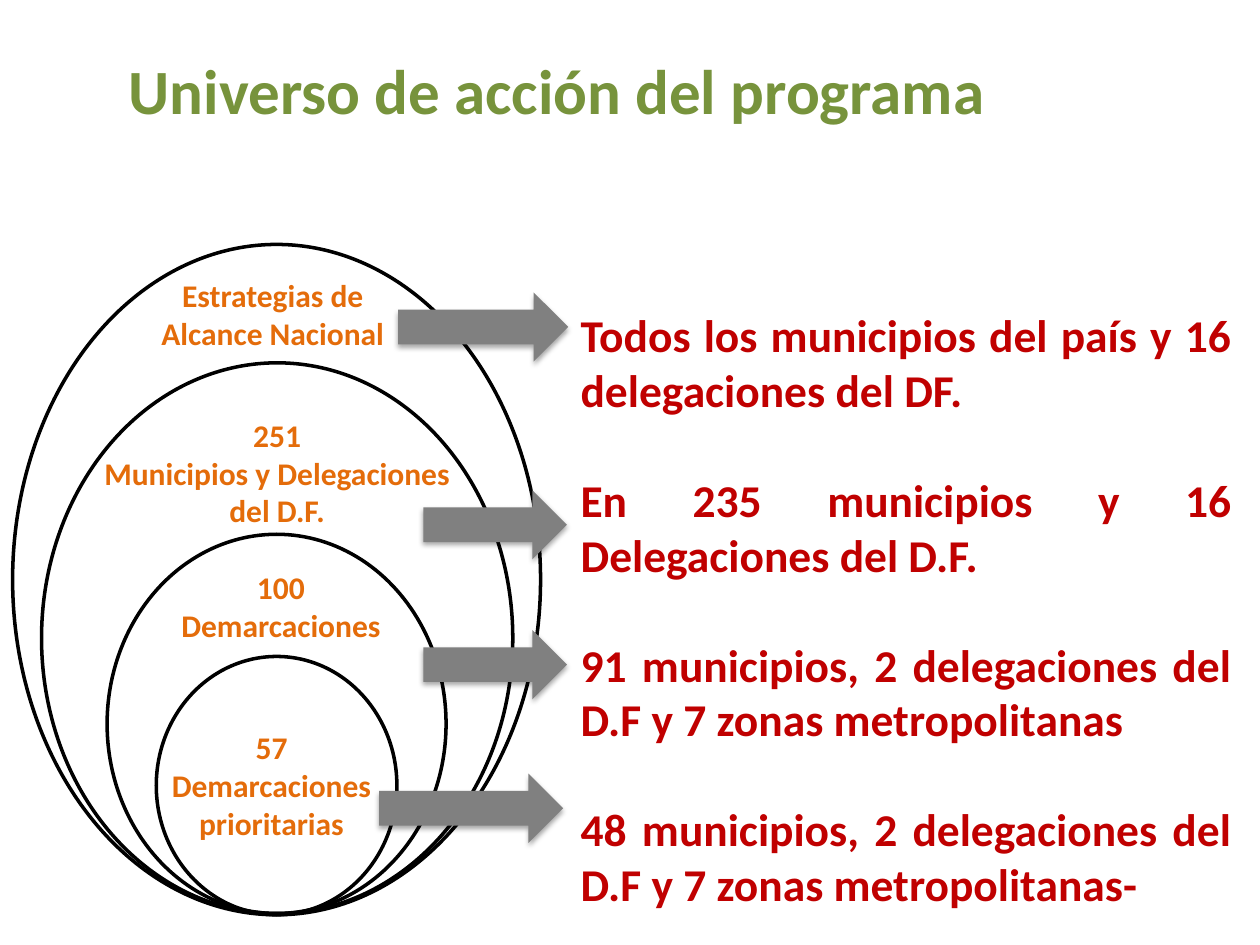
from lxml.etree import SubElement
from pptx import Presentation
from pptx.dml.color import RGBColor
from pptx.enum.shapes import MSO_SHAPE
from pptx.enum.text import PP_ALIGN
from pptx.oxml.ns import qn
from pptx.util import Inches, Pt

COLORS = {"line": "000000", "title": "77933C", "label": "E46C0A",
          "body": "C00000", "arrow": "808080"}


class Deck:
    """Holds the style and the current slide, and draws each kind of element."""

    font = "Calibri"

    def __init__(self, slide):
        self.slide = slide

    def color(self, name):
        return RGBColor.from_string(COLORS[name])

    def shape(self, kind, box):
        item = self.slide.shapes.add_shape(kind, *map(Inches, box))
        item.shadow.inherit = False
        return item

    def ring(self, box):
        item = self.shape(MSO_SHAPE.OVAL, box)
        item.fill.background()
        item.line.color.rgb = self.color("line")
        item.line.width = Pt(2)

    def arrow(self, box):
        item = self.shape(MSO_SHAPE.RIGHT_ARROW, box)
        item.fill.solid()
        item.fill.fore_color.rgb = self.color("arrow")
        item.line.fill.background()
        effects = item._element.spPr.find(qn("a:effectLst"))
        shadow = SubElement(effects, qn("a:outerShdw"), blurRad=str(Pt(3.1)),
                            dist=str(Pt(1.8)), dir="5400000", rotWithShape="0")
        tone = SubElement(shadow, qn("a:srgbClr"), val=COLORS["line"])
        SubElement(tone, qn("a:alpha"), val="35000")

    def text(self, box, lines, color, size, align=PP_ALIGN.CENTER, gap=0):
        frame = self.slide.shapes.add_textbox(*map(Inches, box)).text_frame
        frame.word_wrap = True
        frame.text = "\n".join(lines)
        for para in frame.paragraphs:
            para.alignment = align
            para.space_after = Pt(gap)
            para.font.name = self.font
            para.font.size = Pt(size)
            para.font.bold = True
            para.font.color.rgb = self.color(color)


def main():
    prs = Presentation()
    prs.slide_width, prs.slide_height = Inches(10), Inches(7.5)
    deck = Deck(prs.slides.add_slide(prs.slide_layouts[6]))

    rings = [(0.1, 1.94, 4.19, 5.32), (0.33, 2.88, 3.74, 4.37),
             (0.85, 4.24, 2.69, 3.01), (1.24, 5.21, 1.91, 2.05)]
    labels = [
        ((0.59, 2.14, 3.15, 0.71), ["Estrategias de", "Alcance Nacional"]),
        ((0.47, 3.25, 3.46, 1.01),
         ["251", "Municipios y Delegaciones", "del D.F."]),
        ((0.85, 4.46, 2.76, 0.71), ["100", "Demarcaciones"]),
        ((1.21, 5.73, 1.89, 1.01), ["57 Demarcaciones", "prioritarias"]),
    ]
    arrows = [(3.16, 2.32, 1.35), (3.36, 3.89, 1.14),
              (3.36, 5, 1.14), (3.01, 6.14, 1.46)]
    scopes = [
        "Todos los municipios del país y 16 delegaciones del DF.",
        "En 235 municipios y 16 Delegaciones del D.F.",
        "91 municipios, 2 delegaciones del D.F y 7 zonas metropolitanas",
        "48 municipios, 2 delegaciones del D.F y 7 zonas metropolitanas-",
    ]

    deck.text((0.06, 0.36, 8.72, 0.71), ["Universo de acción del programa"],
              "title", 36)
    deck.text((4.51, 2.39, 5.37, 4.95), scopes, "body", 26,
              PP_ALIGN.JUSTIFY, 31.7)
    for box in rings:
        deck.ring(box)
    for box, lines in labels:
        deck.text(box, lines, "label", 18)
    for left, top, width in arrows:
        deck.arrow((left, top, width, 0.55))

    prs.save("out.pptx")


if __name__ == "__main__":
    main()
